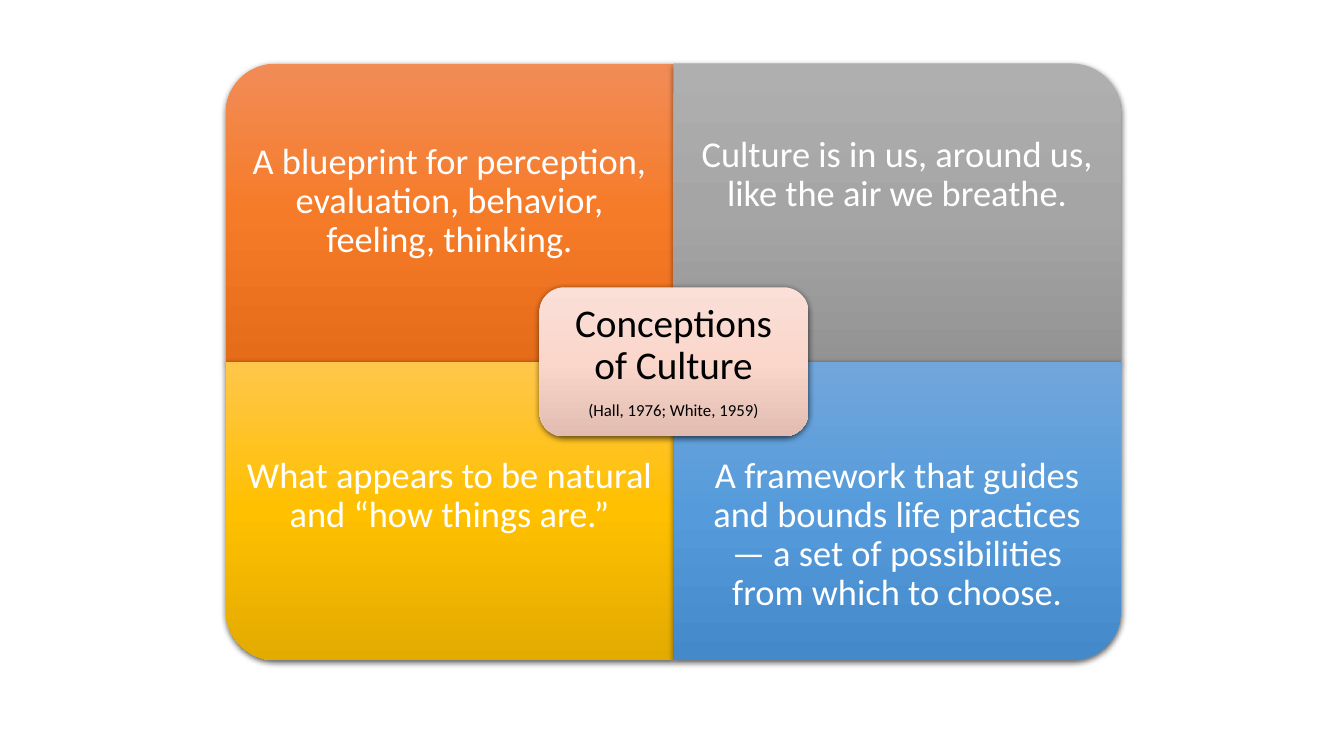
from lxml import etree
from pptx import Presentation
from pptx.dml.color import RGBColor
from pptx.enum.shapes import MSO_SHAPE
from pptx.enum.text import MSO_ANCHOR, PP_ALIGN
from pptx.oxml import parse_xml
from pptx.util import Inches, Pt

QUARTER, ROUNDED = MSO_SHAPE.ROUND_1_RECTANGLE, MSO_SHAPE.ROUNDED_RECTANGLE
TOP, MIDDLE = MSO_ANCHOR.TOP, MSO_ANCHOR.MIDDLE
CENTER = PP_ALIGN.CENTER
NS = 'xmlns:a="http://schemas.openxmlformats.org/drawingml/2006/main"'
SHADOW = (f'<a:outerShdw {NS} blurRad="57150" dist="19050" dir="5400000" algn="ctr" '
          'rotWithShape="0"><a:srgbClr val="000000"><a:alpha val="63000"/></a:srgbClr>'
          '</a:outerShdw>')

prs = Presentation()
prs.slide_width, prs.slide_height = Inches(13.33), Inches(7.5)
s = prs.slides.add_slide(prs.slide_layouts[6])


def add_panel(kind, x, y, w, h, colors, rotation=0):
    """Shape with a vertical gradient that stays upright, and a soft shadow."""
    sp = s.shapes.add_shape(kind, Inches(x), Inches(y), Inches(w), Inches(h))
    sp.rotation = rotation
    sp.line.fill.background()
    sp.shadow.inherit = False
    stops = "".join(f'<a:gs pos="{i * 50000}"><a:srgbClr val="{c}"/></a:gs>'
                    for i, c in enumerate(colors))
    grad = parse_xml(f'<a:gradFill {NS} rotWithShape="0"><a:gsLst>{stops}</a:gsLst>'
                     '<a:lin ang="5400000" scaled="0"/></a:gradFill>')
    pr = sp._element.spPr
    pr.find("{*}ln").addprevious(grad)
    pr.find("{*}effectLst").append(parse_xml(SHADOW))


def add_text(x, y, w, h, lines, color, inset, anchor, top=None):
    """Centred text box; lines holds (text, size) pairs."""
    tf = s.shapes.add_textbox(Inches(x), Inches(y), Inches(w), Inches(h)).text_frame
    tf.word_wrap = True
    tf.vertical_anchor = anchor
    tf.margin_left = tf.margin_right = tf.margin_bottom = Inches(inset)
    tf.margin_top = Inches(top or inset)
    for i, (text, size) in enumerate(lines):
        p = tf.paragraphs[0] if i == 0 else tf.add_paragraph()
        p.text = text
        p.alignment = CENTER
        p.line_spacing = 0.9
        p.space_after = Pt(round(size * 0.35, 1))
        p.font.name, p.font.size = "Calibri", Pt(size)
        p.font.color.rgb = RGBColor.from_string(color)


# Four quadrants: column, row, rotation, gradient, anchor, top inset, text
LEFT, UPPER, W, H = 2.24, 0.63, 4.44, 2.96
TEXT_H = 2.22
quadrants = [
    (0, 0, 270, ("F18C57", "F67B28", "E56C19"), MIDDLE, 0.72,
     "A blueprint for perception, evaluation, behavior, feeling, thinking."),
    (1, 0, 0, ("AFAFAF", "A5A5A5", "939393"), MIDDLE, 0.2,
     "Culture is in us, around us, like the air we breathe."),
    (0, 1, 180, ("FFC64B", "FFC000", "E3AB00"), TOP, 0.2,
     "What appears to be natural and “how things are.”"),
    (1, 1, 90, ("71A6DB", "559BDB", "448ACA"), TOP, 0.2,
     "A framework that guides and bounds life practices — a set of possibilities "
     "from which to choose."),
]
for col, row, rotation, colors, anchor, top, text in quadrants:
    x, y = LEFT + col * W, UPPER + row * H
    # A quarter turn swaps width and height around the same centre
    w, h = (H, W) if rotation in (90, 270) else (W, H)
    add_panel(QUARTER, x + (W - w) / 2, y + (H - h) / 2, w, h, colors, rotation)
    add_text(x, y + row * (H - TEXT_H), W, TEXT_H, [(text, 26)], "FFFFFF", 0.2, anchor, top)

# Centre label
add_panel(ROUNDED, 5.35, 2.85, 2.67, 1.48, ("FAE0D8", "FAD6CB", "E2BCB1"))
add_text(5.42, 2.92, 2.52, 1.34,
         [("Conceptions of Culture", 28), ("(Hall, 1976; White, 1959)", 12)],
         "000000", 0.12, MIDDLE)

prs.save("out.pptx")
